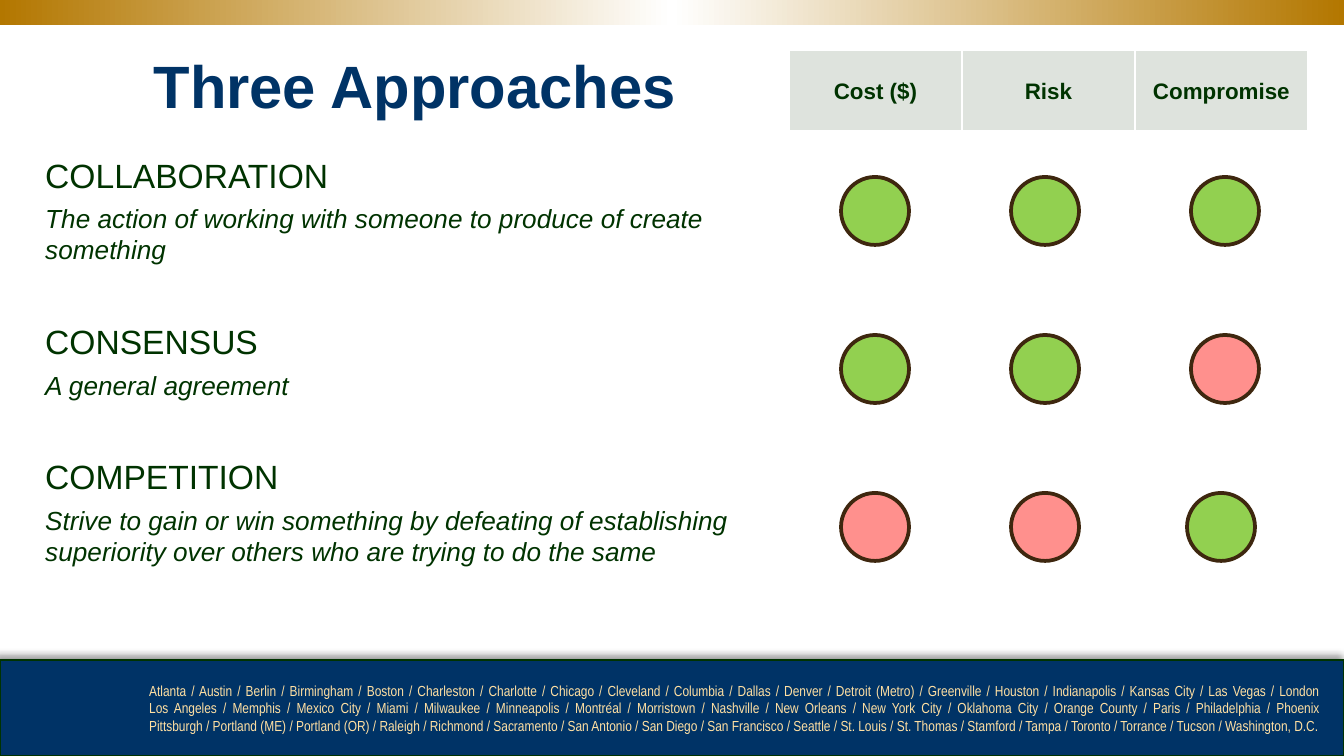
from copy import deepcopy
from dataclasses import dataclass

from lxml import etree
from pptx import Presentation
from pptx.dml.color import RGBColor
from pptx.enum.shapes import MSO_SHAPE
from pptx.enum.text import MSO_ANCHOR, PP_ALIGN
from pptx.oxml.ns import qn
from pptx.util import Emu, Pt

RECT, OVAL = MSO_SHAPE.RECTANGLE, MSO_SHAPE.OVAL
LEFT, CENTER, JUSTIFY = PP_ALIGN.LEFT, PP_ALIGN.CENTER, PP_ALIGN.JUSTIFY
MIDDLE = MSO_ANCHOR.MIDDLE
PX_PER_INCH = 134.4


@dataclass(frozen=True)
class Theme:
    font: str = "Arial"
    narrow: str = "Arial Narrow"
    navy: str = "003366"
    ink: str = "003300"
    gold: str = "B37700"
    white: str = "FFFFFF"
    cream: str = "FFE0A3"
    header: str = "DEE3DD"
    good: str = "92D050"
    bad: str = "FF908D"
    outline: str = "3E270F"
    title_size: float = 32
    heading_size: float = 18
    body_size: float = 14
    header_size: float = 12
    footer_size: float = 7.8


THEME = Theme()

APPROACHES = [
    ("COLLABORATION",
     "The action of working with someone to produce of create something"),
    ("CONSENSUS", "A general agreement"),
    ("COMPETITION",
     "Strive to gain or win something by defeating of establishing "
     "superiority over others who are trying to do the same"),
]
CRITERIA = ["Cost ($)", "Risk", "Compromise"]
RATINGS = [
    (177, [(841, True), (1011, True), (1191, True)]),
    (335, [(841, True), (1011, True), (1191, False)]),
    (493, [(841, False), (1011, False), (1187, True)]),
]
CITIES = "\n".join([
    "Atlanta / Austin / Berlin / Birmingham / Boston / Charleston / Charlotte / "
    "Chicago / Cleveland / Columbia / Dallas / Denver / Detroit (Metro) / "
    "Greenville / Houston / Indianapolis / Kansas City / Las Vegas / London",
    "Los Angeles / Memphis / Mexico City / Miami / Milwaukee / Minneapolis / "
    "Montréal / Morristown / Nashville / New Orleans / New York City / "
    "Oklahoma City / Orange County / Paris / Philadelphia / Phoenix",
    "Pittsburgh / Portland (ME) / Portland (OR) / Raleigh / Richmond / "
    "Sacramento / San Antonio / San Diego / San Francisco / Seattle / St. Louis / "
    "St. Thomas / Stamford / Tampa / Toronto / Torrance / Tucson / Washington, D.C.",
])


def px(n):
    return Emu(round(n * 914400 / PX_PER_INCH))


def rgb(color):
    return RGBColor.from_string(color)


def style(p, size, color, font=THEME.font, align=LEFT, bold=False, italic=False):
    p.alignment = align
    p.font.name = font
    p.font.size = Pt(size)
    p.font.color.rgb = rgb(color)
    p.font.bold = bold
    p.font.italic = italic


def add_shape(slide, kind, box, fill=None, line=None, width=1):
    sp = slide.shapes.add_shape(kind, *map(px, box))
    sp.shadow.inherit = False
    if fill:
        sp.fill.solid()
        sp.fill.fore_color.rgb = rgb(fill)
    if line:
        sp.line.color.rgb = rgb(line)
        sp.line.width = Pt(width)
    else:
        sp.line.fill.background()
    return sp


def add_text_frame(slide, box):
    tf = slide.shapes.add_textbox(*map(px, box)).text_frame
    tf.word_wrap = True
    return tf


def add_top_band(slide):
    sp = add_shape(slide, RECT, (0, 0, 1344, 25))
    sp.fill.gradient()
    sp.fill.gradient_angle = 0
    stops = next(sp._element.spPr.iter(qn("a:gsLst")))
    stops.append(deepcopy(stops[-1]))
    colors = (THEME.gold, THEME.white, THEME.gold)
    for i, (stop, color) in enumerate(zip(sp.fill.gradient_stops, colors)):
        stop.position = i / 2
        stop.color.rgb = rgb(color)


def add_shadow(sp):
    effects = sp._element.spPr.find(qn("a:effectLst"))
    shadow = etree.SubElement(
        effects, qn("a:outerShdw"), blurRad=str(Pt(4)), dist=str(Pt(3)),
        dir=str(225 * 60000), algn="br", rotWithShape="0")
    color = etree.SubElement(shadow, qn("a:srgbClr"), val="000000")
    etree.SubElement(color, qn("a:alpha"), val="40000")


def add_footer(slide):
    add_shadow(add_shape(slide, RECT, (0, 660, 1344, 96), THEME.navy, THEME.ink))
    p = add_text_frame(slide, (136, 675, 1199, 66)).paragraphs[0]
    p.text = CITIES
    style(p, THEME.footer_size, THEME.cream, THEME.narrow, JUSTIFY)


def add_title(slide):
    tf = add_text_frame(slide, (52, 36, 726, 75))
    tf.margin_top = px(13)
    p = tf.paragraphs[0]
    p.text = "Three Approaches"
    style(p, THEME.title_size, THEME.navy, align=CENTER, bold=True)


def add_approaches(slide):
    tf = add_text_frame(slide, (32, 148, 751, 488))
    for i, (heading, meaning) in enumerate(APPROACHES):
        p = tf.add_paragraph() if i else tf.paragraphs[0]
        p.text = heading
        p.space_before = Pt(30 if i else 0)
        style(p, THEME.heading_size, THEME.ink)
        p = tf.add_paragraph()
        p.text = meaning
        p.space_before = Pt(4)
        style(p, THEME.body_size, THEME.ink, italic=True)


def set_borders(cell, **widths):
    tcPr = cell._tc.get_or_add_tcPr()
    for side in "LRTB":
        ln = etree.SubElement(tcPr, qn(f"a:ln{side}"), w=str(Pt(widths.get(side, 1))))
        fill = etree.SubElement(ln, qn("a:solidFill"))
        etree.SubElement(fill, qn("a:srgbClr"), val=THEME.white)


def add_criteria_table(slide):
    heights = [83, 155, 155, 155]
    box = (789, 50, 519, sum(heights))
    table = slide.shapes.add_table(len(heights), len(CRITERIA), *map(px, box)).table
    table.first_row = table.horz_banding = False
    for column in table.columns:
        column.width = px(173)
    for i, (row, height) in enumerate(zip(table.rows, heights)):
        row.height = px(height)
        for cell in row.cells:
            set_borders(cell, T=3 if i == 1 else 1, B=1 if i else 3)
            cell.fill.background()
    for cell, label in zip(table.rows[0].cells, CRITERIA):
        cell.fill.solid()
        cell.fill.fore_color.rgb = rgb(THEME.header)
        cell.vertical_anchor = MIDDLE
        p = cell.text_frame.paragraphs[0]
        p.text = label
        style(p, THEME.header_size, THEME.ink, align=CENTER, bold=True)


def add_ratings(slide):
    for y, row in RATINGS:
        for x, good in row:
            fill = THEME.good if good else THEME.bad
            add_shape(slide, OVAL, (x, y, 68, 68), fill, THEME.outline, 2)


def main():
    prs = Presentation()
    prs.slide_width, prs.slide_height = px(1344), px(756)
    slide = prs.slides.add_slide(prs.slide_layouts[6])
    add_footer(slide)
    add_top_band(slide)
    add_approaches(slide)
    add_criteria_table(slide)
    add_ratings(slide)
    add_title(slide)
    prs.save("out.pptx")


if __name__ == "__main__":
    main()
